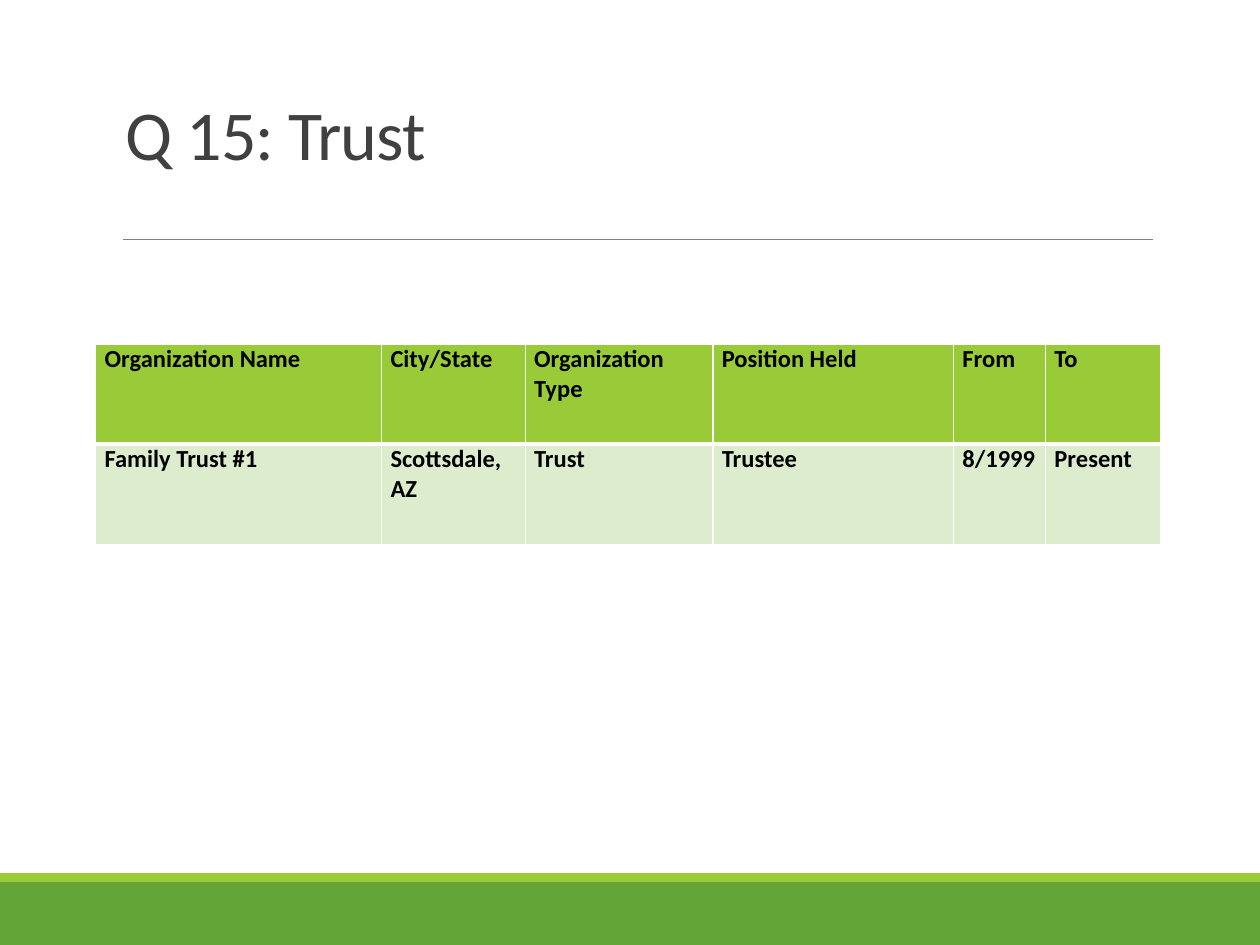
from dataclasses import dataclass

from lxml.etree import SubElement
from pptx import Presentation
from pptx.dml.color import RGBColor
from pptx.enum.shapes import MSO_CONNECTOR, MSO_SHAPE
from pptx.enum.text import MSO_ANCHOR
from pptx.oxml.ns import qn
from pptx.util import Inches, Pt


@dataclass(frozen=True)
class Theme:
    font: str = "Calibri"
    title_size: int = 40
    table_size: int = 14
    title: str = "404040"
    text: str = "000000"
    rule: str = "808080"
    border: str = "FFFFFF"
    dark_green: str = "63A537"
    green: str = "99CB38"
    pale_green: str = "DEECCE"


THEME = Theme()
COLUMN_WIDTHS = [2.27, 1.14, 1.49, 1.91, 0.73, 0.91]
ROWS = [
    ["Organization Name", "City/State", "Organization Type", "Position Held", "From", "To"],
    ["Family Trust #1", "Scottsdale, AZ", "Trust", "Trustee", "8/1999", "Present"],
]


def rgb(color):
    return RGBColor.from_string(color)


def style_font(p, size, color, bold=False):
    p.font.name = THEME.font
    p.font.size = Pt(size)
    p.font.color.rgb = rgb(color)
    p.font.bold = bold


def add_band(slide, left, top, width, height, color):
    sp = slide.shapes.add_shape(
        MSO_SHAPE.RECTANGLE, Inches(left), Inches(top), Inches(width), Inches(height))
    sp.shadow.inherit = False
    sp.fill.solid()
    sp.fill.fore_color.rgb = rgb(color)
    sp.line.fill.background()


def add_footer(slide, left, top, width, height):
    """Dark band with a thin light stripe along its top."""
    stripe = 0.07
    add_band(slide, left, top + stripe, width, height - stripe, THEME.dark_green)
    add_band(slide, left, top, width, stripe, THEME.green)


def add_title(slide, left, top, width, height, text):
    """Title with a rule along the bottom of its box."""
    bottom = Inches(top + height)
    rule = slide.shapes.add_connector(
        MSO_CONNECTOR.STRAIGHT, Inches(left + 0.08), bottom, Inches(left + width), bottom)
    rule.line.color.rgb = rgb(THEME.rule)
    rule.line.width = Pt(0.5)
    SubElement(rule._element.spPr, qn("a:effectLst"))

    box = slide.shapes.add_textbox(Inches(left), Inches(top), Inches(width), Inches(height))
    tf = box.text_frame
    tf.word_wrap = True
    tf.vertical_anchor = MSO_ANCHOR.MIDDLE
    p = tf.paragraphs[0]
    p.line_spacing = 0.85
    r = p.add_run()
    r.text = text
    style_font(p, THEME.title_size, THEME.title)
    r.font._element.set("spc", "-50")


def set_borders(cell, bottom):
    """Call before filling the cell: borders come first in its properties."""
    tc_pr = cell._tc.get_or_add_tcPr()
    for side, width in (("L", 1), ("R", 1), ("T", 1), ("B", bottom)):
        ln = SubElement(tc_pr, qn(f"a:ln{side}"), w=str(Pt(width)))
        fill = SubElement(ln, qn("a:solidFill"))
        SubElement(fill, qn("a:srgbClr"), val=THEME.border)


def add_trust_table(slide, left, top, width, height):
    table = slide.shapes.add_table(
        len(ROWS), len(COLUMN_WIDTHS),
        Inches(left), Inches(top), Inches(width), Inches(height)).table
    for column, share in zip(table.columns, COLUMN_WIDTHS):
        column.width = Inches(width * share / sum(COLUMN_WIDTHS))
    for i, row in enumerate(ROWS):
        header = i == 0
        for j, text in enumerate(row):
            cell = table.cell(i, j)
            set_borders(cell, bottom=3 if header else 1)
            cell.fill.solid()
            cell.fill.fore_color.rgb = rgb(THEME.green if header else THEME.pale_green)
            cell.margin_left = cell.margin_right = Inches(0.07)
            cell.margin_top = cell.margin_bottom = 0
            cell.text = text
            style_font(cell.text_frame.paragraphs[0], THEME.table_size, THEME.text, bold=True)


def main():
    prs = Presentation()
    prs.slide_width, prs.slide_height = Inches(10), Inches(7.5)
    slide = prs.slides.add_slide(prs.slide_layouts[6])
    add_footer(slide, 0, 6.93, 10, 0.57)
    add_title(slide, 0.9, 0.31, 8.25, 1.59, "Q 15: Trust")
    add_trust_table(slide, 0.76, 2.73, 8.45, 1.59)
    prs.save("out.pptx")


if __name__ == "__main__":
    main()
